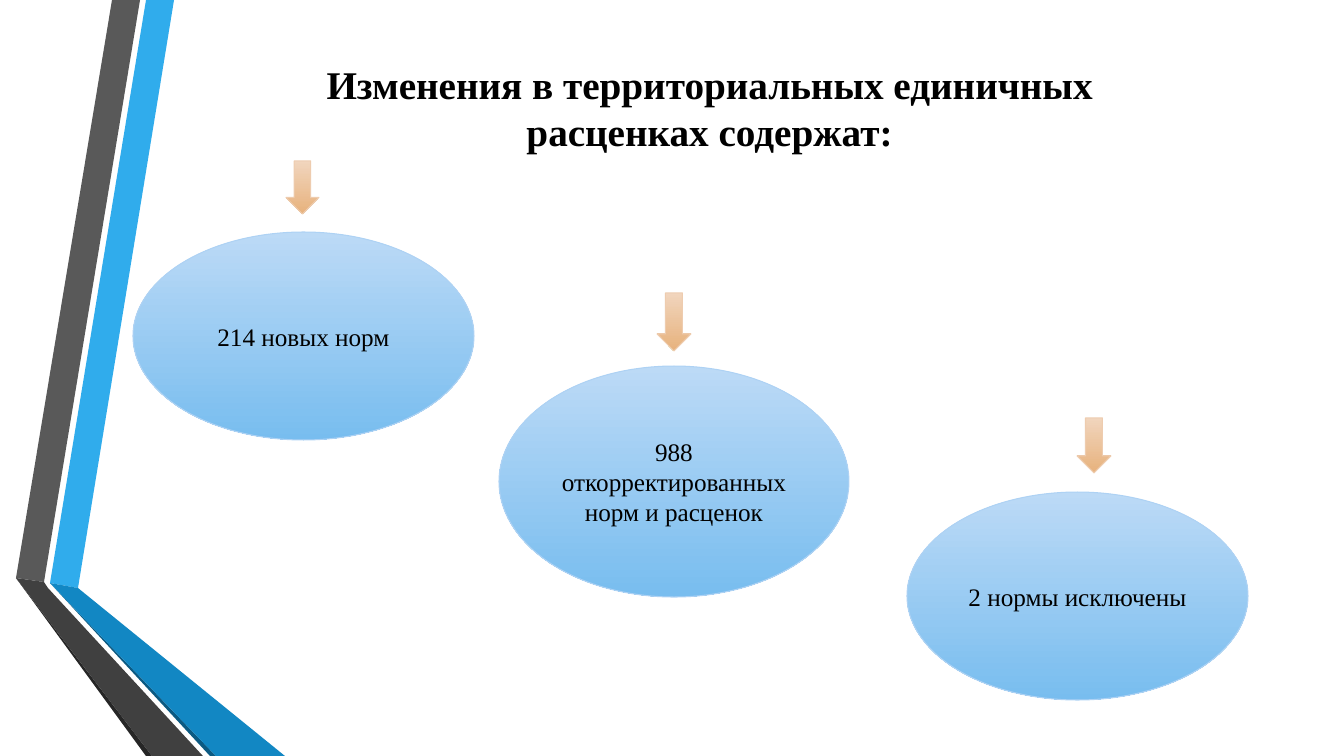
from dataclasses import dataclass

from pptx import Presentation
from pptx.dml.color import RGBColor
from pptx.enum.shapes import MSO_SHAPE as Shape
from pptx.enum.text import MSO_ANCHOR as Anchor, PP_ALIGN as Align
from pptx.util import Emu, Pt

# Content: boxes are left, top, width, height in px
TITLE = ("Изменения в территориальных единичных расценках содержат:",
         (286, 55, 847, 146))
CHANGES = [  # text, ellipse box, arrow box
    ("214 новых норм", (133, 232, 341, 208), (286, 161, 33, 53)),
    ("988 откорректированных норм и расценок", (499, 366, 350, 231), (657, 293, 34, 58)),
    ("2 нормы исключены", (907, 492, 341, 208), (1077, 418, 34, 55)),
]
RIBBONS = [  # colour name, outline points in px
    ("blue", [(50, 583), (78, 588), (174, 0), (146, 0)]),
    ("gray", [(140, 0), (112, 0), (16, 578), (44, 582)]),
    ("gray_shadow", [(16, 578), (146, 756), (152, 756)]),
    ("blue_shadow", [(50, 583), (210, 756), (216, 756)]),
    ("blue_fold", [(50, 583), (216, 756), (285, 756), (78, 588)]),
    ("gray_fold", [(203, 756), (48, 588), (44, 582), (16, 578), (152, 756)]),
]


@dataclass(frozen=True)
class Theme:
    font: str = "Times New Roman"
    title_size: int = 28
    body_size: int = 18
    line_width: float = 0.75
    text: str = "000000"
    ellipse: tuple = ("BCDAF6", "78BDEF", "AED2F4")  # top, bottom, line
    arrow: tuple = ("F1D5BD", "E7B27D", "EECCAF")
    blue: str = "30ACEC"
    blue_fold: str = "1287C3"
    blue_shadow: str = "0C5A82"
    gray: str = "595959"
    gray_fold: str = "404040"
    gray_shadow: str = "262626"


THEME = Theme()
SLIDE_SIZE = (1344, 756)
PX = 914400 / 100.8


def emu(lengths):
    return [Emu(round(length * PX)) for length in lengths]


def rgb(value):
    return RGBColor.from_string(value)


def write(shape, text, size, bold=False):
    text_frame = shape.text_frame
    text_frame.word_wrap = True
    text_frame.text = text
    paragraph = text_frame.paragraphs[0]
    paragraph.alignment = Align.CENTER
    font = paragraph.runs[0].font
    font.name, font.size, font.bold = THEME.font, Pt(size), bold
    font.color.rgb = rgb(THEME.text)


def add_gradient_shape(slide, kind, box, colors):
    shape = slide.shapes.add_shape(kind, *emu(box))
    shape.shadow.inherit = False
    top, bottom, line = colors
    shape.fill.gradient()
    shape.fill.gradient_angle = 270
    for stop, color, position in zip(shape.fill.gradient_stops, (top, bottom), (0, 1)):
        stop.color.rgb = rgb(color)
        stop.position = position
    shape.line.color.rgb = rgb(line)
    shape.line.width = Pt(THEME.line_width)
    return shape


def add_ribbon(slide, color, points):
    builder = slide.shapes.build_freeform(*points[0], scale=PX)
    builder.add_line_segments(points[1:], close=True)
    ribbon = builder.convert_to_shape()
    ribbon.shadow.inherit = False
    ribbon.fill.solid()
    ribbon.fill.fore_color.rgb = rgb(color)
    ribbon.line.fill.background()


def main():
    presentation = Presentation()
    presentation.slide_width, presentation.slide_height = emu(SLIDE_SIZE)
    slide = presentation.slides.add_slide(presentation.slide_layouts[6])

    # Folded ribbons on the left
    for color_name, points in RIBBONS:
        add_ribbon(slide, getattr(THEME, color_name), points)

    # Title
    title, title_box = TITLE
    write(slide.shapes.add_textbox(*emu(title_box)), title, THEME.title_size, bold=True)

    # Changes, each under its arrow
    for text, ellipse_box, arrow_box in CHANGES:
        ellipse = add_gradient_shape(slide, Shape.OVAL, ellipse_box, THEME.ellipse)
        ellipse.text_frame.vertical_anchor = Anchor.MIDDLE
        write(ellipse, text, THEME.body_size)
        add_gradient_shape(slide, Shape.DOWN_ARROW, arrow_box, THEME.arrow)

    presentation.save("out.pptx")


if __name__ == "__main__":
    main()
